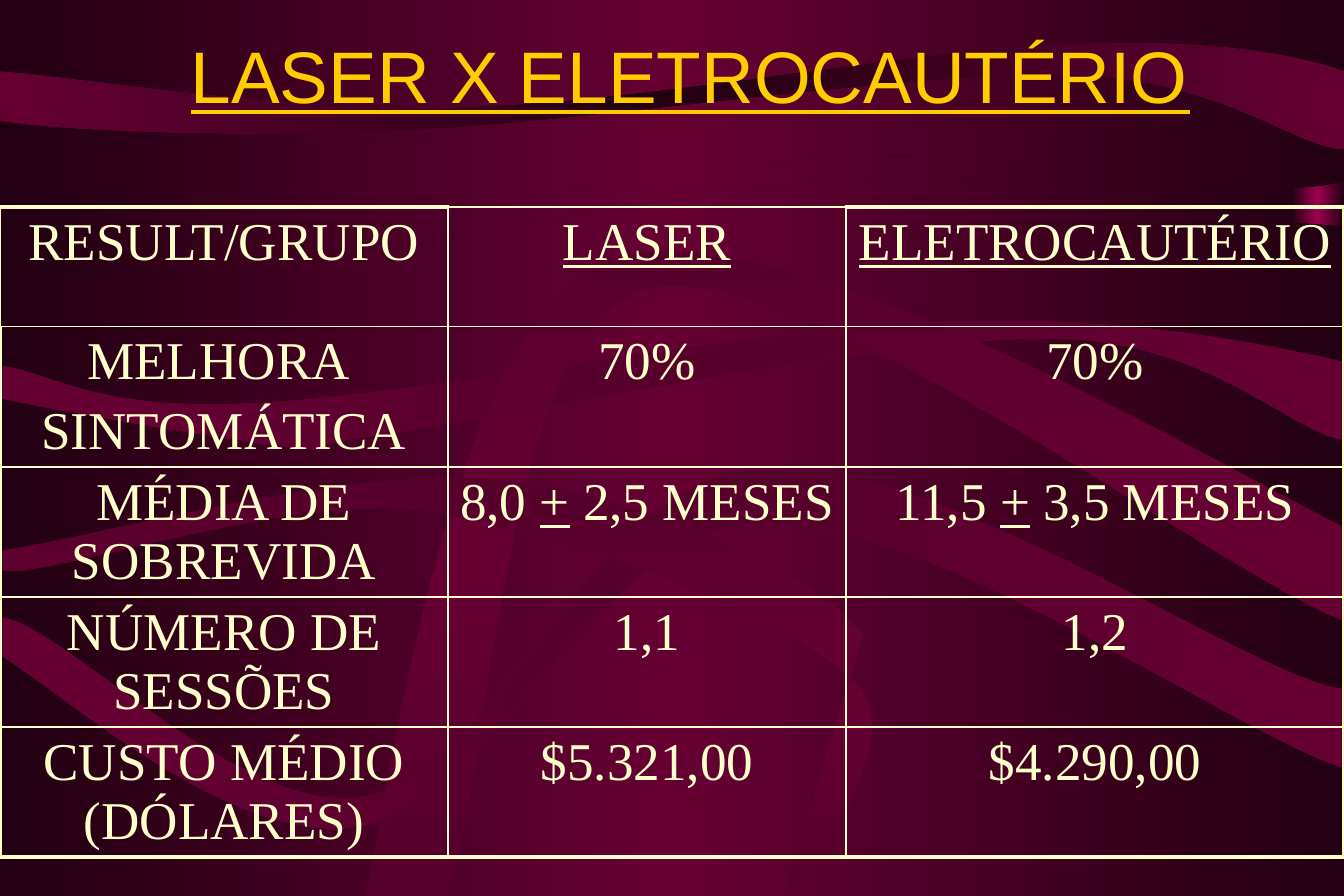
from lxml.etree import SubElement as Sub
from pptx import Presentation
from pptx.dml.color import RGBColor as RGB
from pptx.enum.shapes import MSO_SHAPE as SHAPE
from pptx.enum.text import MSO_ANCHOR as ANCHOR, MSO_AUTO_SIZE as FIT, PP_ALIGN as ALIGN
from pptx.oxml.ns import qn
from pptx.util import Pt

COLORS = {"dark": "220011", "wine": "660033", "plum": "56002B",
          "rose": "9C004E", "gold": "FFCC00", "cream": "FFFFCC"}
WIDTH, HEIGHT = 810, 540
THIN, THICK = 1, 2.25

# Outlines in points: a start, then lines (x, y) and Bézier curves (six numbers)
TOP_PANEL = [(0, 0), (810, 0), (810, 109), (760, 125, 642, 88, 506, 95),
             (372, 102, 84, 168, 0, 152), (0, 0)]
LOWER_PANEL = [(0, 164), (145, 176, 276, 140, 372, 125), (372, 125, 459, 114, 474, 112),
               (580, 91, 742, 136, 810, 136), (810, 540), (0, 540),
               (0, 540, 0, 164, 0, 164)]
TOP_RIBBON = [(0, 43), (0, 73), (42, 79, 142, 83, 249, 78), (356, 73, 549, 43, 643, 45),
              (737, 47, 782, 90, 810, 90), (810, 43), (782, 33, 729, 23, 642, 27),
              (553, 30, 387, 62, 279, 65), (173, 68, 58, 48, 0, 43)]
MIDDLE_RIBBON = [(0, 220), (0, 240), (30, 247, 142, 266, 180, 270),
                 (218, 274, 153, 273, 229, 262), (304, 251, 535, 203, 632, 204),
                 (729, 204, 780, 263, 810, 265), (810, 218), (770, 209, 678, 189, 568, 194),
                 (459, 197, 248, 239, 153, 243), (59, 248, 32, 225, 0, 220)]
ARCH = [(220, 540), (236, 476, 269, 194, 368, 157), (466, 120, 737, 282, 810, 318),
        (810, 374), (739, 349, 478, 148, 388, 175), (298, 203, 297, 480, 268, 540),
        (220, 540)]
WAVE = [(0, 372), (0, 395), (36, 416, 141, 512, 217, 498), (294, 485, 359, 321, 457, 315),
        (556, 309, 751, 446, 810, 463), (810, 415), (760, 412, 560, 271, 456, 282),
        (357, 292, 297, 465, 221, 480), (145, 495, 37, 374, 0, 372)]
SWIRL = [(0, 332), (0, 343), (21, 352, 168, 297, 255, 308), (341, 320, 480, 373, 516, 412),
         (552, 450, 472, 545, 472, 540), (520, 383), (490, 341, 383, 297, 297, 289),
         (210, 280, 62, 323, 0, 332)]

# One list per cell paragraph; text between underscores is underlined
ROWS = [
    [["RESULT/GRUPO"], ["_LASER_"], ["_ELETROCAUTÉRIO_"]],
    [["MELHORA ", "SINTOMÁTICA"], ["70%"], ["70%"]],
    [["MÉDIA DE SOBREVIDA"], ["8,0 _+_ 2,5 MESES"], ["11,5 _+_ 3,5 MESES"]],
    [["NÚMERO DE SESSÕES"], ["1,1"], ["1,2"]],
    [["CUSTO MÉDIO (DÓLARES)"], ["$5.321,00"], ["$4.290,00"]],
]
COL_WIDTHS = [270, 240, 300]
ROW_HEIGHTS = [72, 72, 72, 72, 77]


class Deck:
    title_font, body_font = "Arial", "Times New Roman"

    def __init__(self):
        self.prs = Presentation()
        self.prs.slide_width, self.prs.slide_height = Pt(WIDTH), Pt(HEIGHT)
        self.s = self.prs.slides.add_slide(self.prs.slide_layouts[5])

    def gradient(self, fill, element, edge, middle, angle=0):
        fill.gradient()
        fill.gradient_angle = angle
        stops = element.find(".//" + qn("a:gsLst"))
        for stop in list(stops):
            stops.remove(stop)
        for pos, name in ((0, edge), (50, middle), (100, edge)):
            stop = Sub(stops, qn("a:gs"), pos=str(pos * 1000))
            Sub(stop, qn("a:srgbClr"), val=COLORS[name])

    def background(self, edge, middle):
        self.gradient(self.s.background.fill, self.s._element, edge, middle)

    def paint(self, sp, edge, middle, angle):
        self.gradient(sp.fill, sp._element, edge, middle, angle)
        sp.line.fill.background()
        sp.shadow.inherit = False

    def rect(self, x, y, w, h, edge, middle, angle=0):
        sp = self.s.shapes.add_shape(SHAPE.RECTANGLE, Pt(x), Pt(y), Pt(w), Pt(h))
        self.paint(sp, edge, middle, angle)

    def outline(self, segments, edge, middle, angle=0):
        start, *rest = [(Pt(seg[i]), Pt(seg[i + 1]))
                        for seg in segments for i in range(0, len(seg), 2)]
        builder = self.s.shapes.build_freeform(*start)
        builder.add_line_segments(rest, close=True)
        sp = builder.convert_to_shape()
        # Join each three points of a curve into one Bézier segment
        geometry = sp._element.find(".//" + qn("a:path"))
        lines = iter(geometry.findall(qn("a:lnTo")))
        for seg in segments[1:]:
            line = next(lines)
            if len(seg) == 6:
                curve = Sub(geometry, qn("a:cubicBezTo"))
                line.addprevious(curve)
                for part in (line, next(lines), next(lines)):
                    curve.append(part[0])
                    geometry.remove(part)
        self.paint(sp, edge, middle, angle)

    def style(self, p, font, size, color):
        p.alignment = ALIGN.CENTER
        p.font.name, p.font.size = font, Pt(size)
        p.font.color.rgb = RGB.from_string(COLORS[color])

    def title(self, text, x, y, w, h):
        sp = self.s.shapes.title
        sp.left, sp.top, sp.width, sp.height = Pt(x), Pt(y), Pt(w), Pt(h)
        tf = sp.text_frame
        tf.text = text
        tf.auto_size, tf.vertical_anchor = FIT.NONE, ANCHOR.MIDDLE
        p = tf.paragraphs[0]
        self.style(p, self.title_font, 44, "gold")
        p.font.underline = True
        # Bring the title in front of the decoration
        self.s.shapes._spTree.append(sp._element)

    def borders(self, cell, widths):
        for side, width in zip("LRTB", widths):
            ln = Sub(cell._tc.get_or_add_tcPr(), qn("a:ln" + side), w=str(Pt(width)))
            Sub(Sub(ln, qn("a:solidFill")), qn("a:srgbClr"), val=COLORS["cream"])

    def cell(self, cell, lines):
        cell.fill.background()
        tf = cell.text_frame
        for i, line in enumerate(lines):
            p = tf.add_paragraph() if i else tf.paragraphs[0]
            self.style(p, self.body_font, 32, "cream")
            p.space_before = Pt(6.4)
            for k, piece in enumerate(line.split("_")):
                if piece:
                    r = p.add_run()
                    r.text = piece
                    if k % 2:
                        r.font.underline = True

    def table(self, rows, x, y, h, col_widths, row_heights):
        n_rows, n_cols = len(rows), len(col_widths)
        frame = self.s.shapes.add_table(n_rows, n_cols, Pt(x), Pt(y),
                                        Pt(sum(col_widths)), Pt(h))
        tbl = frame.table
        tbl.first_row = tbl.horz_banding = False
        for col, width in zip(tbl.columns, col_widths):
            col.width = Pt(width)
        for row, height in zip(tbl.rows, row_heights):
            row.height = Pt(height)
        frame.height = Pt(h)
        for i, row in enumerate(rows):
            for j, lines in enumerate(row):
                # Thick frame, except the first cell's left and the middle column's top
                thick = (j == 0 and i > 0, j == n_cols - 1,
                         i == 0 and j != 1, i == n_rows - 1)
                self.borders(tbl.cell(i, j), [THICK if t else THIN for t in thick])
                self.cell(tbl.cell(i, j), lines)


def main():
    deck = Deck()

    # Background and ribbons
    deck.background("dark", "wine")
    deck.rect(778, 35, 32, 248, "dark", "rose")
    deck.outline(TOP_PANEL, "dark", "wine")
    deck.outline(LOWER_PANEL, "dark", "wine")
    deck.outline(TOP_RIBBON, "wine", "dark")
    deck.outline(MIDDLE_RIBBON, "wine", "plum")
    deck.outline(ARCH, "plum", "wine", 90)
    deck.outline(WAVE, "wine", "plum")
    deck.outline(SWIRL, "plum", "wine", 90)

    # Title and results table
    deck.title("LASER X ELETROCAUTÉRIO", 72, 0, 688, 90)
    deck.table(ROWS, 0, 124.8, 415.2, COL_WIDTHS, ROW_HEIGHTS)

    deck.prs.save("out.pptx")


if __name__ == "__main__":
    main()
